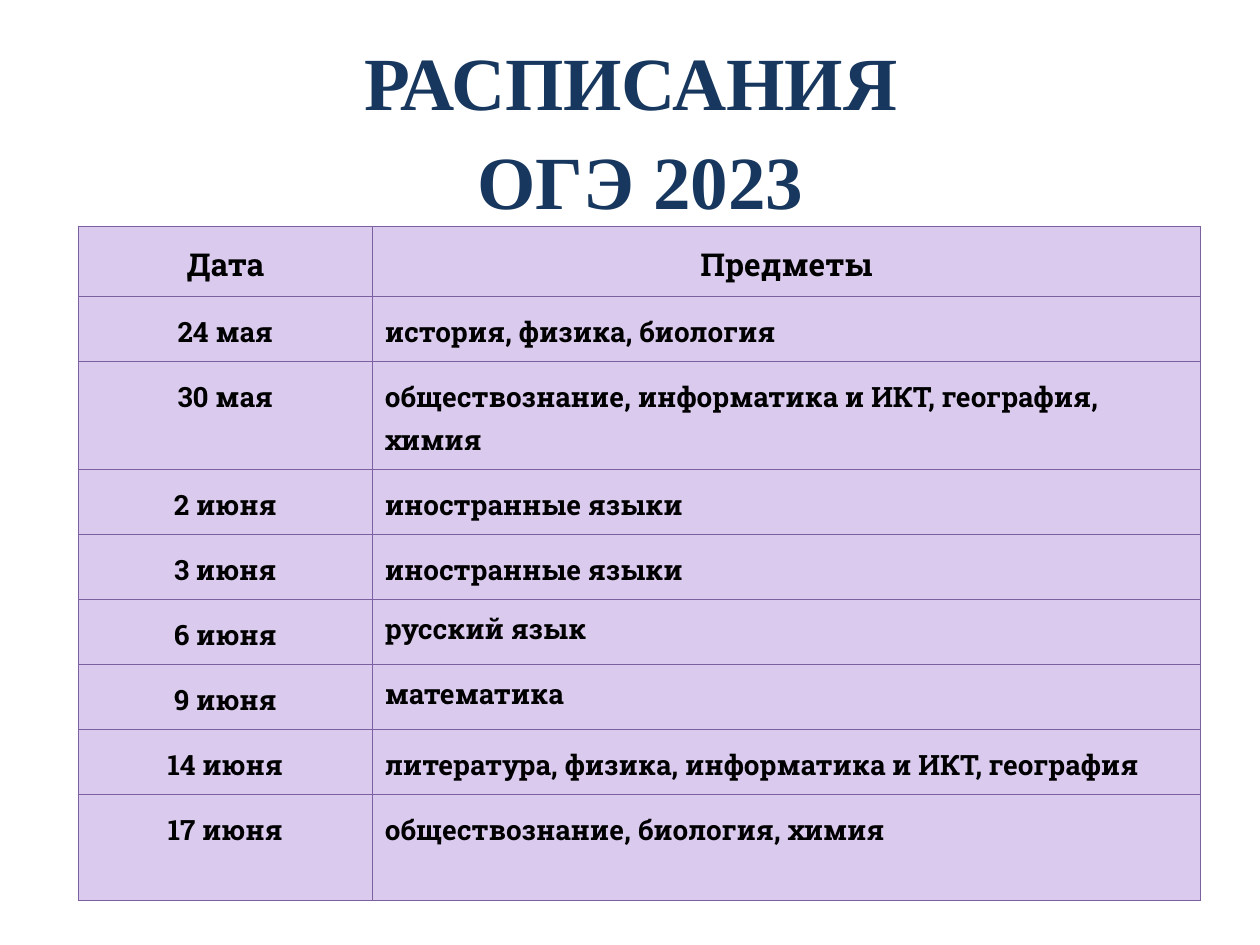
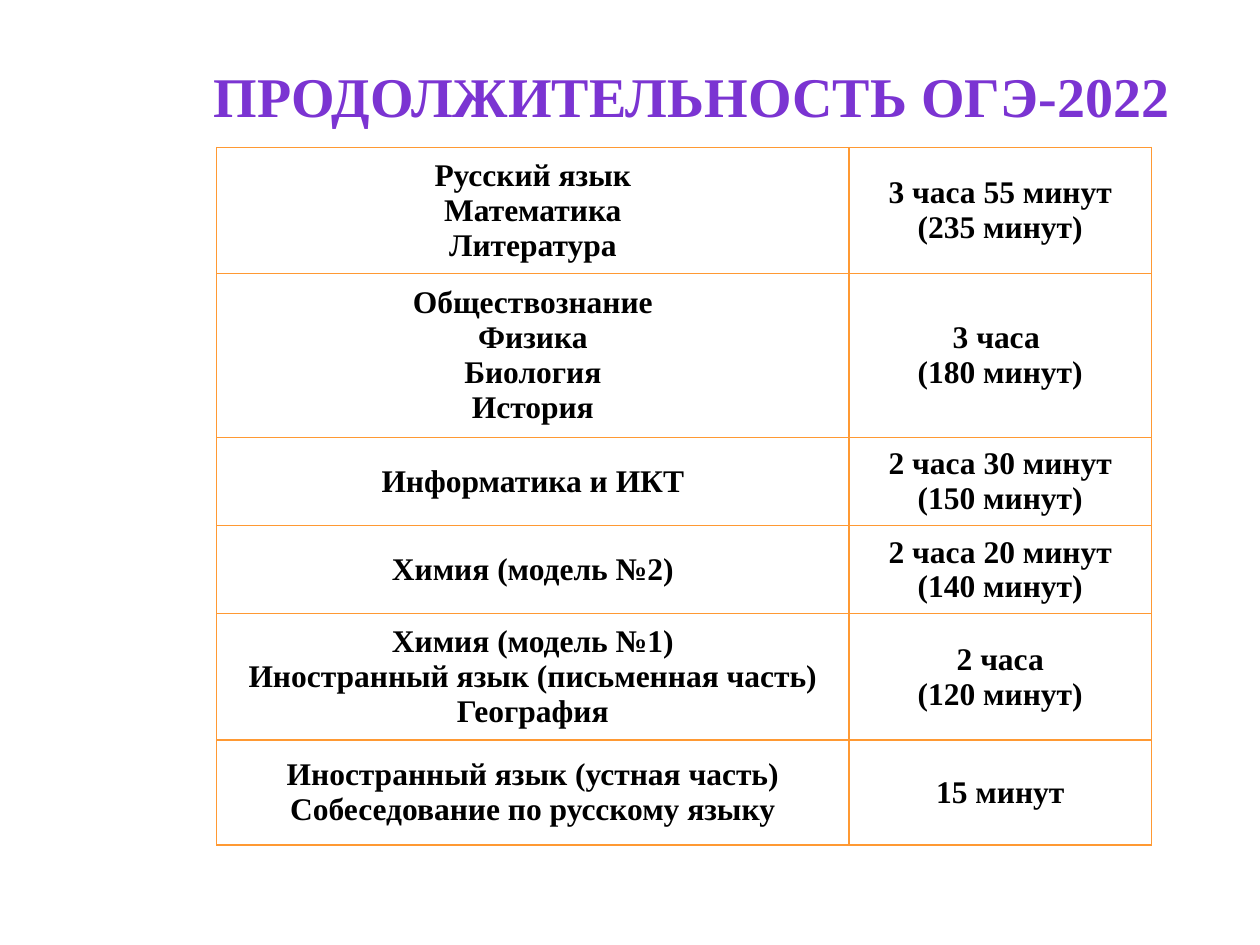
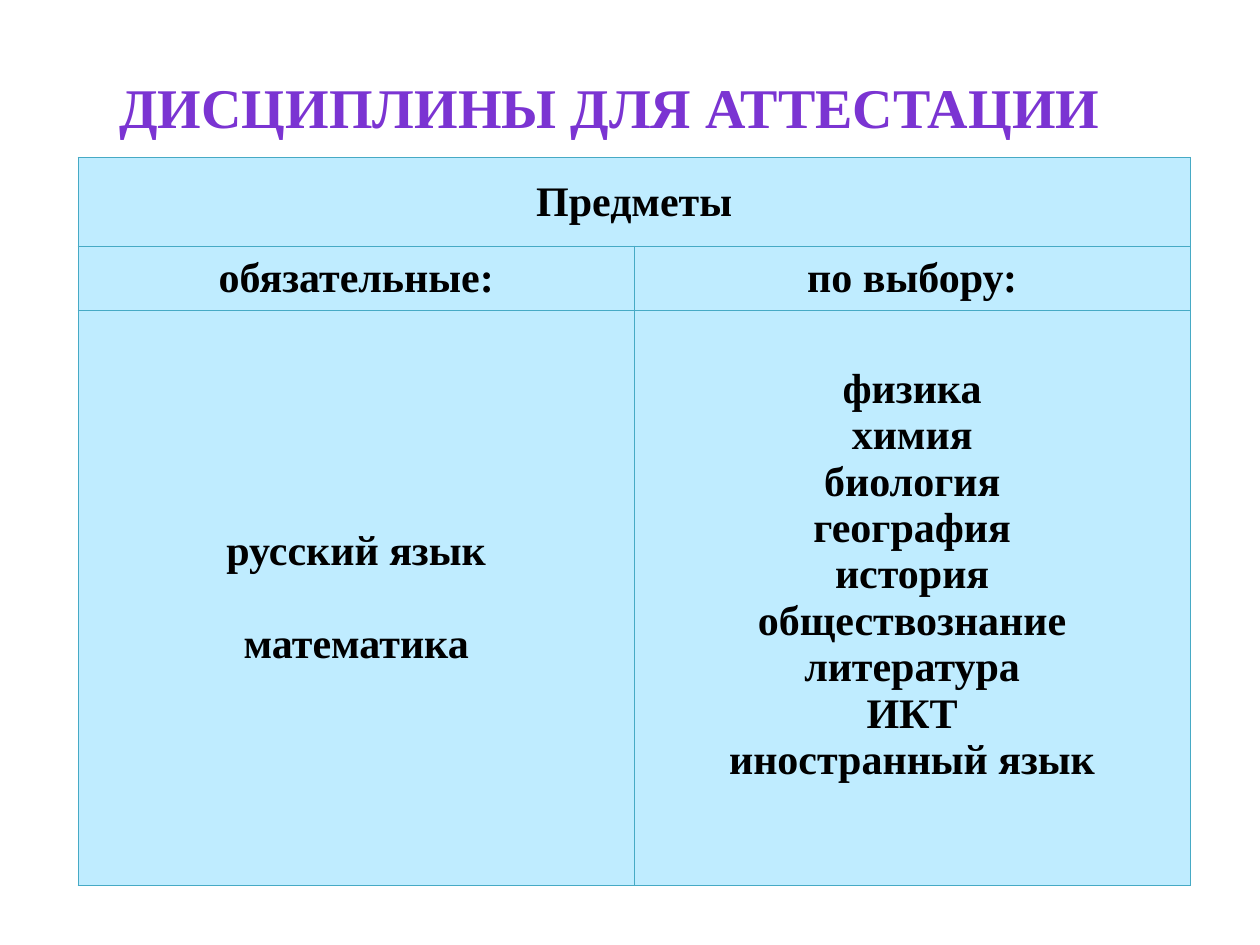
from lxml.etree import SubElement
from pptx import Presentation
from pptx.dml.color import RGBColor
from pptx.enum.text import MSO_ANCHOR, PP_ALIGN
from pptx.oxml.ns import qn
from pptx.util import Pt

# Shared look
SERIF = "Times New Roman"
SLAB = "Roboto Slab"
BLACK, WHITE = "000000", "FFFFFF"
NAVY, VIOLET = "17375E", "7B34D2"
LILAC, LILAC_LINE = "DACAEE", "7D60A0"
ORANGE_LINE = "FF9933"
SKY, SKY_LINE = "BFECFF", "46AAC5"
BORDER_WIDTH = 0.75
TITLE_SPACING = 1.1

# Slide content
SCHEDULE = [
    ("Дата", "Предметы"),
    ("24 мая", "история, физика, биология"),
    ("30 мая", "обществознание, информатика и ИКТ, география, химия"),
    ("2 июня", "иностранные языки"),
    ("3 июня", "иностранные языки"),
    ("6 июня", "русский язык"),
    ("9 июня", "математика"),
    ("14 июня", "литература, физика, информатика и ИКТ, география"),
    ("17 июня", "обществознание, биология, химия"),
]
SINGLE_SPACED = ("русский язык", "математика")

DURATIONS = [
    ("Русский язык\nМатематика\nЛитература", "3 часа 55 минут\n(235 минут)"),
    ("Обществознание\nФизика\nБиология\nИстория", "3 часа \n(180 минут)"),
    ("Информатика и ИКТ", "2 часа 30 минут\n(150 минут)"),
    ("Химия (модель №2)", "2 часа 20 минут\n(140 минут)"),
    ("Химия (модель №1)\nИностранный язык (письменная часть)\nГеография",
     "2 часа\n(120 минут)"),
    ("Иностранный язык (устная часть)\nСобеседование по русскому языку",
     "15 минут"),
]

DISCIPLINES = [
    ("Предметы", ""),
    ("обязательные:", "по выбору:"),
    ("русский язык\nматематика",
     "физика\nхимия\nбиология\nгеография\nистория\nобществознание\n"
     "литература\nИКТ\nиностранный язык"),
]


def color(hex_string):
    return RGBColor.from_string(hex_string)


def set_attributes(target, values):
    for name, value in values.items():
        setattr(target, name, value)


def write_text(text_frame, text, font, paragraph_format):
    """Write one paragraph per line of text."""
    for index, line in enumerate(text.split("\n")):
        paragraph = text_frame.paragraphs[0] if index == 0 else text_frame.add_paragraph()
        set_attributes(paragraph, paragraph_format)
        run = paragraph.add_run()
        run.text = line
        set_attributes(run.font, {"name": font["name"], "size": Pt(font["size"]), "bold": True})
        run.font.color.rgb = color(font["color"])


def add_title(slide, box, text, size, title_color):
    text_box = slide.shapes.add_textbox(*map(Pt, box))
    text_box.text_frame.word_wrap = True
    write_text(text_box.text_frame, text,
               {"name": SERIF, "size": size, "color": title_color},
               {"alignment": PP_ALIGN.CENTER, "line_spacing": TITLE_SPACING})


def set_borders(cell, line_color):
    properties = cell._tc.get_or_add_tcPr()
    for position, side in enumerate(("lnL", "lnR", "lnT", "lnB")):
        line = SubElement(properties, qn(f"a:{side}"), w=str(Pt(BORDER_WIDTH)))
        fill = SubElement(line, qn("a:solidFill"))
        SubElement(fill, qn("a:srgbClr"), val=line_color)
        properties.remove(line)
        properties.insert(position, line)


def add_grid(slide, left, top, columns, rows, fill, line_color, margins, anchor):
    """Add an empty table with filled, bordered cells."""
    frame = slide.shapes.add_table(len(rows), len(columns), Pt(left), Pt(top),
                                   Pt(sum(columns)), Pt(sum(rows)))
    table = frame.table
    set_attributes(table, {"first_row": False, "horz_banding": False})
    for column, width in zip(table.columns, columns):
        column.width = Pt(width)
    for row, height in zip(table.rows, rows):
        row.height = Pt(height)
    side, edge = map(Pt, margins)
    for cell in table.iter_cells():
        set_attributes(cell, {"margin_left": side, "margin_right": side, "margin_top": edge,
                              "margin_bottom": edge, "vertical_anchor": anchor})
        cell.fill.solid()
        cell.fill.fore_color.rgb = color(fill)
        set_borders(cell, line_color)
    return table


def fill_centered(table, content, size):
    font = {"name": SERIF, "size": size, "color": BLACK}
    for row, texts in enumerate(content):
        for column, text in enumerate(texts):
            if text:
                write_text(table.cell(row, column).text_frame, text, font,
                           {"alignment": PP_ALIGN.CENTER})


def build_schedule(slide):
    heights = [40, 36.7, 61.2] + [36.7] * 5 + [60.7]
    table = add_grid(slide, 44.7, 129.3, (168, 473.5), heights, LILAC, LILAC_LINE,
                     (7.2, 6.5), MSO_ANCHOR.TOP)
    for row, texts in enumerate(SCHEDULE):
        font = {"name": SLAB, "size": 16 if row else 18, "color": BLACK}
        for column, text in enumerate(texts):
            centered = row == 0 or column == 0
            write_text(table.cell(row, column).text_frame, text, font, {
                "alignment": PP_ALIGN.CENTER if centered else PP_ALIGN.LEFT,
                "line_spacing": 1.0 if text in SINGLE_SPACED else 1.15,
            })
    add_title(slide, (34, 11.5, 664, 152.6), "РАСПИСАНИЯ \nОГЭ 2023", 42.9, NAVY)


def build_durations(slide):
    add_title(slide, (112.3, 28, 574, 46), "ПРОДОЛЖИТЕЛЬНОСТЬ ОГЭ-2022 ", 32, VIOLET)
    table = add_grid(slide, 123.8, 84.3, (361.4, 172.8), (71.4, 92.8, 49.6, 49.6, 71.4, 60),
                     WHITE, ORANGE_LINE, (3.6, 3.6), MSO_ANCHOR.MIDDLE)
    fill_centered(table, DURATIONS, 18)


def build_disciplines(slide):
    table = add_grid(slide, 44.7, 90, (317.7, 317.7), (50.7, 36.7, 328.5),
                     SKY, SKY_LINE, (2.2, 2.2), MSO_ANCHOR.MIDDLE)
    table.cell(0, 0).merge(table.cell(0, 1))
    fill_centered(table, DISCIPLINES, 24)
    required, elective = table.cell(2, 0), table.cell(2, 1)
    required.text_frame.paragraphs[1].space_before = Pt(26.5)
    elective.margin_bottom = Pt(28.5)
    add_title(slide, (22.3, 33.8, 652.3, 46), "ДИСЦИПЛИНЫ ДЛЯ АТТЕСТАЦИИ", 32, VIOLET)


def main():
    presentation = Presentation()
    set_attributes(presentation, {"slide_width": Pt(720), "slide_height": Pt(540)})
    blank = presentation.slide_layouts[6]
    for build in (build_schedule, build_durations, build_disciplines):
        build(presentation.slides.add_slide(blank))
    presentation.save("out.pptx")


if __name__ == "__main__":
    main()
